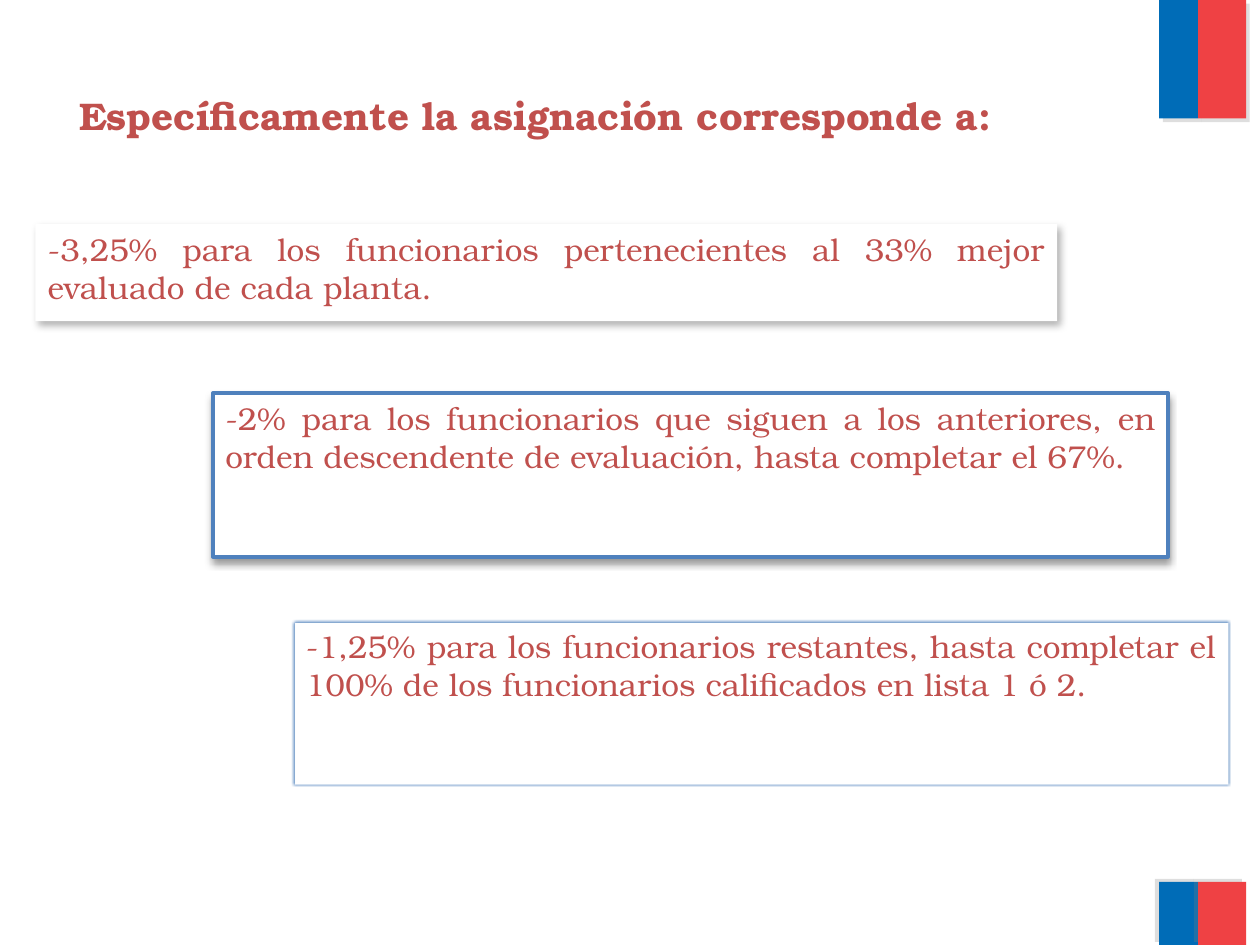
from dataclasses import dataclass

from lxml import etree
from pptx import Presentation
from pptx import util as u
from pptx.dml.color import RGBColor
from pptx.enum import shapes, text
from pptx.oxml.ns import qn


@dataclass(frozen=True)
class Theme:
    font: str = "TeX Gyre Bonum"
    ink: str = "C0504D"
    paper: str = "FFFFFF"
    border: str = "4F81BD"
    flag_blue: str = "006CB7"
    flag_red: str = "EF4144"
    title_size: int = 22
    body_size: int = 18
    border_width: int = 2


@dataclass(frozen=True)
class Shadow:
    """Opacity in percent, blur and distance in points, angle in degrees."""
    color: str
    opacity: int
    blur: float
    distance: float
    angle: int


class SlideBuilder:
    def __init__(self, page, theme):
        self.page = page
        self.theme = theme

    def add_effect(self, shape, name, **attributes):
        effects = shape._element.spPr.find(qn("a:effectLst"))
        values = {key: str(value) for key, value in attributes.items()}
        return etree.SubElement(effects, qn(name), values)

    def cast_shadow(self, shape, shadow):
        outer = self.add_effect(
            shape, "a:outerShdw", blurRad=int(u.Pt(shadow.blur)),
            dist=int(u.Pt(shadow.distance)), dir=shadow.angle * 60000,
            algn="ctr", rotWithShape=0)
        color = etree.SubElement(outer, qn("a:srgbClr"), val=shadow.color)
        etree.SubElement(color, qn("a:alpha"), val=str(shadow.opacity * 1000))

    def rectangle(self, place, fill, line=None, shadow=None):
        shape = self.page.shapes.add_shape(
            shapes.MSO_SHAPE.RECTANGLE, *map(u.Inches, place))
        shape.fill.solid()
        shape.fill.fore_color.rgb = RGBColor.from_string(fill)
        if line:
            shape.line.color.rgb = RGBColor.from_string(line)
            shape.line.width = u.Pt(self.theme.border_width)
        else:
            shape.line.fill.background()
        shape.shadow.inherit = False
        if shadow:
            self.cast_shadow(shape, shadow)
        return shape

    def fill_text(self, shape, words, size, align, bold=False):
        frame = shape.text_frame
        frame.word_wrap = True
        frame.vertical_anchor = text.MSO_ANCHOR.TOP
        para = frame.paragraphs[0]
        para.alignment = align
        span = para.add_run()
        span.text = words
        span.font.name = self.theme.font
        span.font.size = u.Pt(size)
        span.font.bold = bold
        span.font.color.rgb = RGBColor.from_string(self.theme.ink)

    def title(self, place, words):
        box = self.page.shapes.add_textbox(*map(u.Inches, place))
        self.fill_text(box, words, self.theme.title_size, text.PP_ALIGN.CENTER, bold=True)

    def card(self, place, words, line=None, shadow=None, soft_edge=0):
        box = self.rectangle(place, self.theme.paper, line, shadow)
        if soft_edge:
            self.add_effect(box, "a:softEdge", rad=int(u.Pt(soft_edge)))
        self.fill_text(box, words, self.theme.body_size, text.PP_ALIGN.JUSTIFY)

    def flag(self, top, height, angle):
        shadow = Shadow("808080", 25, 0, 3, angle)
        self.rectangle((9.2, top, 0.31, height), self.theme.flag_blue, shadow=shadow)
        self.rectangle((9.51, top, 0.38, height), self.theme.flag_red, shadow=shadow)


def main():
    deck = Presentation()
    deck.slide_width, deck.slide_height = u.Inches(10), u.Inches(7.5)
    theme = Theme()
    slide = SlideBuilder(deck.slides.add_slide(deck.slide_layouts[6]), theme)

    slide.flag(top=0, height=0.94, angle=45)
    slide.flag(top=7, height=0.5, angle=215)
    slide.title((0.51, 0.68, 7.58, 0.47),
                "Específicamente la asignación corresponde a: ")
    slide.card((0.28, 1.78, 8.11, 0.77),
               "-3,25% para los funcionarios pertenecientes al 33% mejor "
               "evaluado de cada planta.",
               shadow=Shadow("000000", 30, 4.5, 2.6, 53))
    slide.card((1.69, 3.12, 7.58, 1.3),
               "-2% para los funcionarios que siguen a los anteriores, en orden "
               "descendente de evaluación, hasta completar el 67%.",
               line=theme.border, shadow=Shadow("000000", 40, 4, 3, 90))
    slide.card((2.33, 4.93, 7.42, 1.3),
               "-1,25% para los funcionarios restantes, hasta completar el 100% "
               "de los funcionarios calificados en lista 1 ó 2.",
               line=theme.border, soft_edge=1)
    deck.save("out.pptx")


if __name__ == "__main__":
    main()
